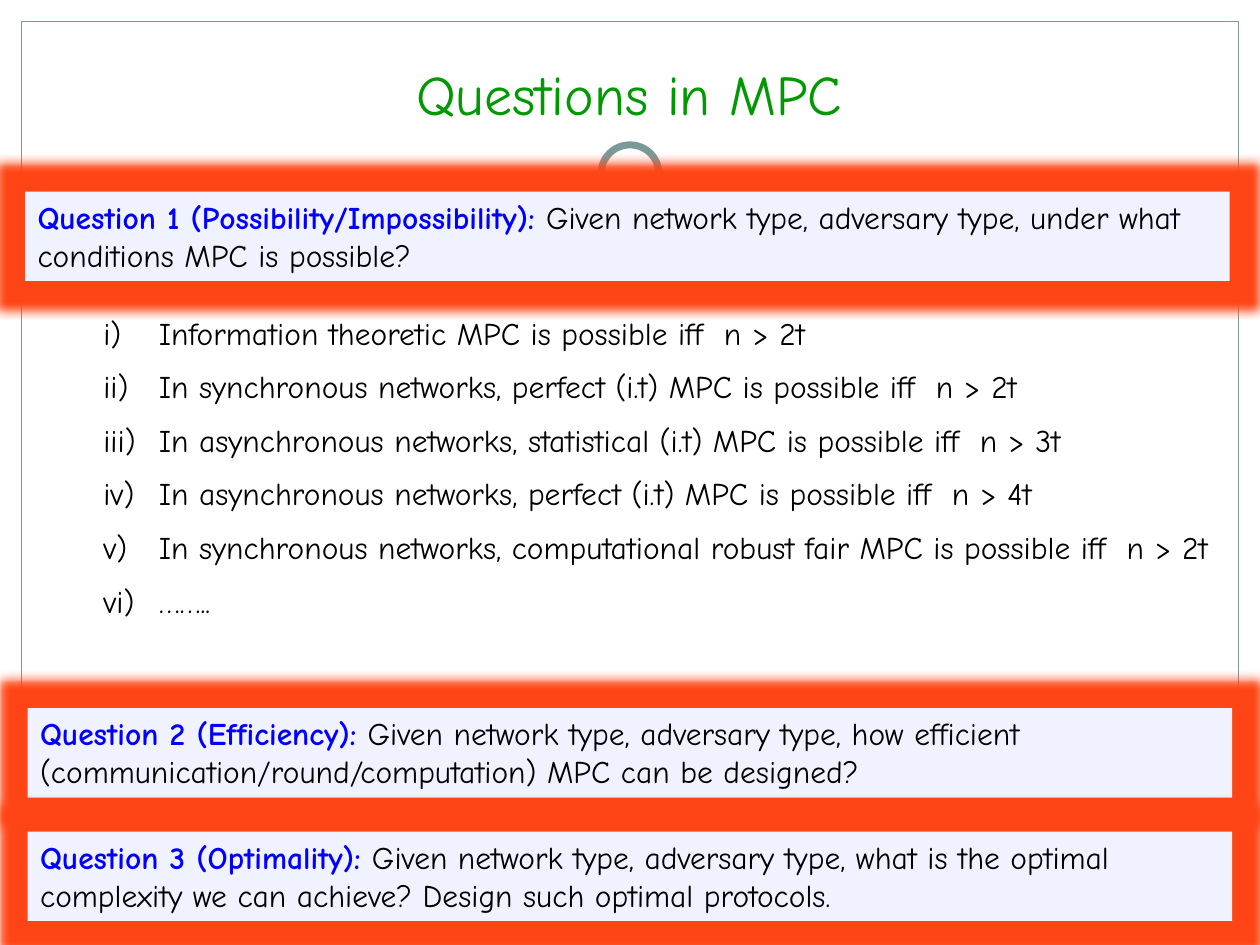
from lxml.etree import SubElement
from pptx import Presentation
from pptx.dml.color import RGBColor
from pptx.enum.shapes import MSO_SHAPE
from pptx.enum.text import MSO_ANCHOR, MSO_AUTO_SIZE, PP_ALIGN
from pptx.oxml.ns import qn
from pptx.util import Inches, Pt

COLORS = {
    "title": "009900",
    "label": "0000FF",
    "text": "000000",
    "panel": "F0F2FF",
    "glow": "FF4515",
    "frame": "7C999A",
}
FONT = "Comic Neue"

QUESTIONS = [
    (0.2, 1.52, "Question 1 (Possibility/Impossibility): ",
     "Given network type, adversary type, under what conditions MPC is possible?"),
    (0.22, 5.62, "Question 2 (Efficiency): ",
     "Given network type, adversary type, how efficient "
     "(communication/round/computation) MPC can be designed?"),
    (0.22, 6.6, "Question 3 (Optimality): ",
     "Given network type, adversary type, what is the optimal complexity "
     "we can achieve? Design such optimal protocols."),
]

RESULTS = [
    "Information theoretic MPC is possible iff  n > 2t",
    "In synchronous networks, perfect (i.t) MPC is possible iff  n > 2t",
    "In asynchronous networks, statistical (i.t) MPC is possible iff  n > 3t",
    "In asynchronous networks, perfect (i.t) MPC is possible iff  n > 4t",
    "In synchronous networks, computational robust fair MPC is possible iff  n > 2t",
    "……..",
]


def rgb(name):
    return RGBColor.from_string(COLORS[name])


def write(paragraph, text, size=18, color="text", bold=False,
          align=PP_ALIGN.LEFT, before=0):
    paragraph.alignment = align
    paragraph.space_before = Pt(before)
    run = paragraph.add_run()
    run.text = text
    run.font.name = FONT
    run.font.size = Pt(size)
    run.font.bold = bold
    run.font.color.rgb = rgb(color)


class QuestionSlide:
    def __init__(self, deck):
        self.slide = deck.slides.add_slide(deck.slide_layouts[1])

    def place(self, shape, left, top, width, height):
        shape.left, shape.top = Inches(left), Inches(top)
        shape.width, shape.height = Inches(width), Inches(height)

    def outline(self, kind, left, top, width, height, weight):
        border = self.slide.shapes.add_shape(
            kind, Inches(left), Inches(top), Inches(width), Inches(height))
        border.shadow.inherit = False
        border.fill.background()
        border.line.color.rgb = rgb("frame")
        border.line.width = Pt(weight)

    def title(self, text):
        heading = self.slide.shapes.title
        self.place(heading, 0.33, 0.23, 9.33, 0.83)
        frame = heading.text_frame
        frame.vertical_anchor = MSO_ANCHOR.BOTTOM
        frame.auto_size = MSO_AUTO_SIZE.NONE
        write(frame.paragraphs[0], text, size=32, color="title",
              align=PP_ALIGN.CENTER)

    def question(self, left, top, label, text):
        panel = self.slide.shapes.add_shape(
            MSO_SHAPE.RECTANGLE, Inches(left), Inches(top),
            Inches(9.56), Inches(0.71))
        panel.shadow.inherit = False
        panel.fill.solid()
        panel.fill.fore_color.rgb = rgb("panel")
        panel.line.fill.background()
        effects = panel._element.spPr.find(qn("a:effectLst"))
        glow = SubElement(effects, qn("a:glow"), rad=str(Pt(11)))
        SubElement(glow, qn("a:srgbClr"), val=COLORS["glow"])
        frame = panel.text_frame
        frame.word_wrap = True
        frame.vertical_anchor = MSO_ANCHOR.TOP
        write(frame.paragraphs[0], label, color="label", bold=True)
        write(frame.paragraphs[0], text)

    def numbered_list(self, items):
        body = self.slide.placeholders[1]
        self.place(body, 0.72, 2.44, 8.99, 2.98)
        frame = body.text_frame
        frame.auto_size = MSO_AUTO_SIZE.NONE
        for index, item in enumerate(items):
            paragraph = frame.add_paragraph() if index else frame.paragraphs[0]
            write(paragraph, item, before=9 if index else 0)
            properties = paragraph._p.get_or_add_pPr()
            properties.set("marL", str(Inches(0.44)))
            properties.set("indent", str(Inches(-0.44)))
            SubElement(properties, qn("a:buFont"), typeface=FONT)
            SubElement(properties, qn("a:buAutoNum"), type="romanLcParenR")


def main():
    deck = Presentation()
    deck.slide_width, deck.slide_height = Inches(10), Inches(7.5)
    page = QuestionSlide(deck)
    page.outline(MSO_SHAPE.RECTANGLE, 0.17, 0.17, 9.66, 7.16, 0.75)
    page.outline(MSO_SHAPE.OVAL, 4.77, 1.15, 0.46, 0.46, 4)
    page.title("Questions in MPC")
    page.numbered_list(RESULTS)
    for entry in QUESTIONS:
        page.question(*entry)
    deck.save("out.pptx")


if __name__ == "__main__":
    main()
